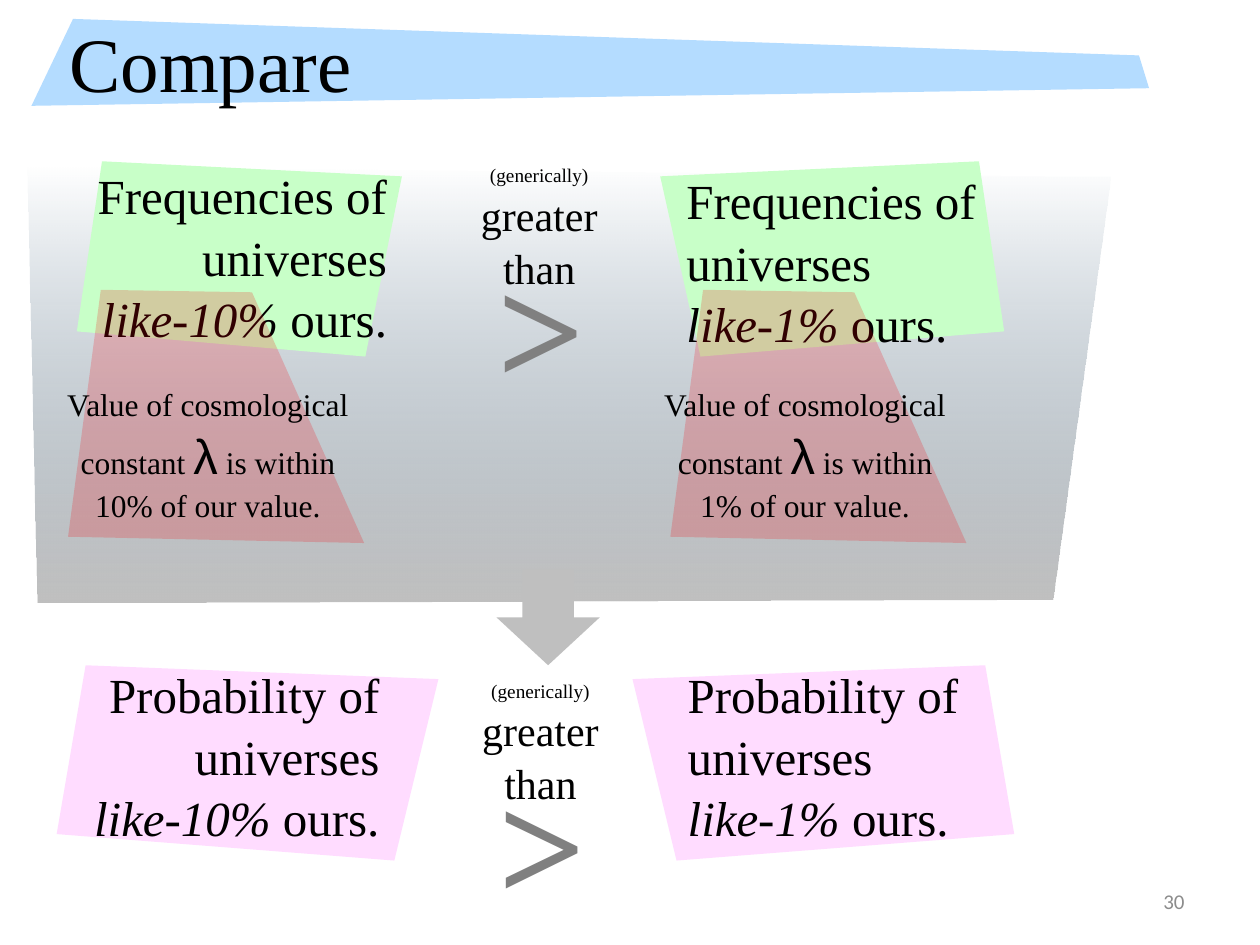
from lxml import etree
from pptx import Presentation
from pptx import util as u
from pptx.dml.color import RGBColor
from pptx.enum import shapes, text
from pptx.oxml.ns import qn

PX = 9144
COLORS = {
    "black": "000000", "sign": "808080", "number": "8C8C8C",
    "banner": "B4DCFF", "frequency": "C8FFC8", "probability": "FFDCFF",
    "value": "F90009", "haze": "67839A", "panel": "BFBFBF",
}
SERIF = "Times New Roman"
LEFT, CENTER, RIGHT = text.PP_ALIGN.LEFT, text.PP_ALIGN.CENTER, text.PP_ALIGN.RIGHT


def color(name):
    return RGBColor.from_string(COLORS[name])


class Painter:
    def __init__(self, page):
        self.page = page

    def place(self, item, box):
        item.left, item.top, item.width, item.height = (u.Emu(n * PX) for n in box)

    def finish(self, shape, fill):
        shape.shadow.inherit = False
        shape.line.fill.background()
        shape.fill.solid()
        shape.fill.fore_color.rgb = color(fill)
        return shape

    def set_alpha(self, node, percent):
        etree.SubElement(node, qn("a:alpha")).set("val", str(percent * 1000))

    def polygon(self, points, fill, alpha=100):
        builder = self.page.shapes.build_freeform(*points[0], scale=PX)
        builder.add_line_segments(points[1:], close=True)
        shape = self.finish(builder.convert_to_shape(), fill)
        if alpha < 100:
            self.set_alpha(next(shape.element.spPr.iter(qn("a:srgbClr"))), alpha)
        return shape

    def fade(self, shape, start, end):
        shape.fill.gradient()
        shape.fill.gradient_angle = 270
        for stop, name, position in zip(shape.fill.gradient_stops, (start, end), (0, 1)):
            stop.color.rgb = color(name)
            stop.position = position
        self.set_alpha(next(shape.element.spPr.iter(qn("a:srgbClr"))), 0)

    def arrow(self, box, fill):
        shape = self.page.shapes.add_shape(
            shapes.MSO_SHAPE.DOWN_ARROW, *(u.Emu(n * PX) for n in box))
        self.finish(shape, fill)

    def style(self, span, size, font=SERIF, fill="black", bold=False, italic=False):
        span.font.size = u.Pt(size)
        span.font.name = font
        span.font.color.rgb = color(fill)
        span.font.bold = bold
        span.font.italic = italic

    def label(self, box, paragraphs, align=LEFT, spacing=1.05, wrap=True,
              anchor=text.MSO_ANCHOR.TOP):
        item = self.page.shapes.add_textbox(*(u.Emu(n * PX) for n in box))
        frame = item.text_frame
        frame.word_wrap = wrap
        frame.vertical_anchor = anchor
        for index, spans in enumerate(paragraphs):
            para = frame.add_paragraph() if index else frame.paragraphs[0]
            para.alignment = align
            para.line_spacing = spacing
            for words, look in spans:
                span = para.add_run()
                span.text = words
                self.style(span, **look)

    def title(self, words, box, size):
        item = self.page.shapes.title
        self.place(item, box)
        item.text_frame.text = words
        item.text_frame.vertical_anchor = text.MSO_ANCHOR.MIDDLE
        para = item.text_frame.paragraphs[0]
        para.alignment = LEFT
        self.style(para.runs[0], size)
        self.page.shapes[-1].element.addnext(item.element)

    def universes(self, subject, share, box, align):
        self.label(box, [
            [(f"{subject} of universes", {"size": 28})],
            [(f"like-{share}", {"size": 28, "italic": True}), (" ours.", {"size": 28})],
        ], align)

    def constant(self, share, box):
        self.label(box, [[
            ("Value of cosmological constant ", {"size": 18}),
            ("λ", {"size": 28, "font": "Arial"}),
            (f" is within {share} of our value.", {"size": 18}),
        ]], CENTER)

    def comparison(self, left, top):
        self.label((left, top, 116, 109), [
            [("(generically)", {"size": 11})],
            [("greater than", {"size": 24})],
        ], CENTER)
        self.label((left + 15, top + 55, 90, 158),
                   [[(">", {"size": 88, "fill": "sign", "bold": True})]],
                   spacing=1.0, wrap=False)


def main():
    deck = Presentation()
    deck.slide_width, deck.slide_height = u.Inches(10), u.Inches(7.5)
    page = deck.slides.add_slide(deck.slide_layouts[5])
    painter = Painter(page)

    panel = painter.polygon([(22, 132), (37, 132), (881, 140), (835, 475), (30, 478)], "panel")
    painter.fade(panel, "haze", "panel")

    probability = [(68, 528), (348, 539), (313, 683), (45, 662)]
    mirrored = [(850 - x, y) for x, y in probability]
    painter.polygon(probability, "probability")
    painter.universes("Probability", "10%", (45, 520, 266, 151), RIGHT)
    painter.polygon(mirrored, "probability")
    painter.universes("Probability", "1%", (536, 520, 266, 151), LEFT)
    painter.comparison(371, 533)
    painter.arrow((394, 452, 82, 76), "panel")

    painter.polygon([(58, 15), (904, 44), (912, 70), (25, 84)], "banner")
    painter.title("Compare", (45, 2, 837, 94), 44)
    painter.label((717, 695, 233, 40),
                  [[("30", {"size": 12, "font": "Calibri", "fill": "number"})]],
                  RIGHT, spacing=1.0, anchor=text.MSO_ANCHOR.MIDDLE)

    value = [(80, 230), (200, 232), (289, 431), (54, 426)]
    sides = [
        ("10%", [(81, 128), (319, 140), (290, 283), (61, 263)],
         (64, 124, 253, 151), RIGHT, 0, (33, 299, 264, 118)),
        ("1%", [(777, 128), (524, 140), (556, 283), (797, 263)],
         (535, 128, 253, 151), LEFT, 478, (511, 299, 256, 118)),
    ]
    for share, frequency, heading, align, shift, note in sides:
        painter.polygon(frequency, "frequency")
        painter.universes("Frequencies", share, heading, align)
        painter.polygon([(x + shift, y) for x, y in value], "value", alpha=20)
        painter.constant(share, note)
    painter.comparison(370, 124)

    deck.save("out.pptx")


if __name__ == "__main__":
    main()
